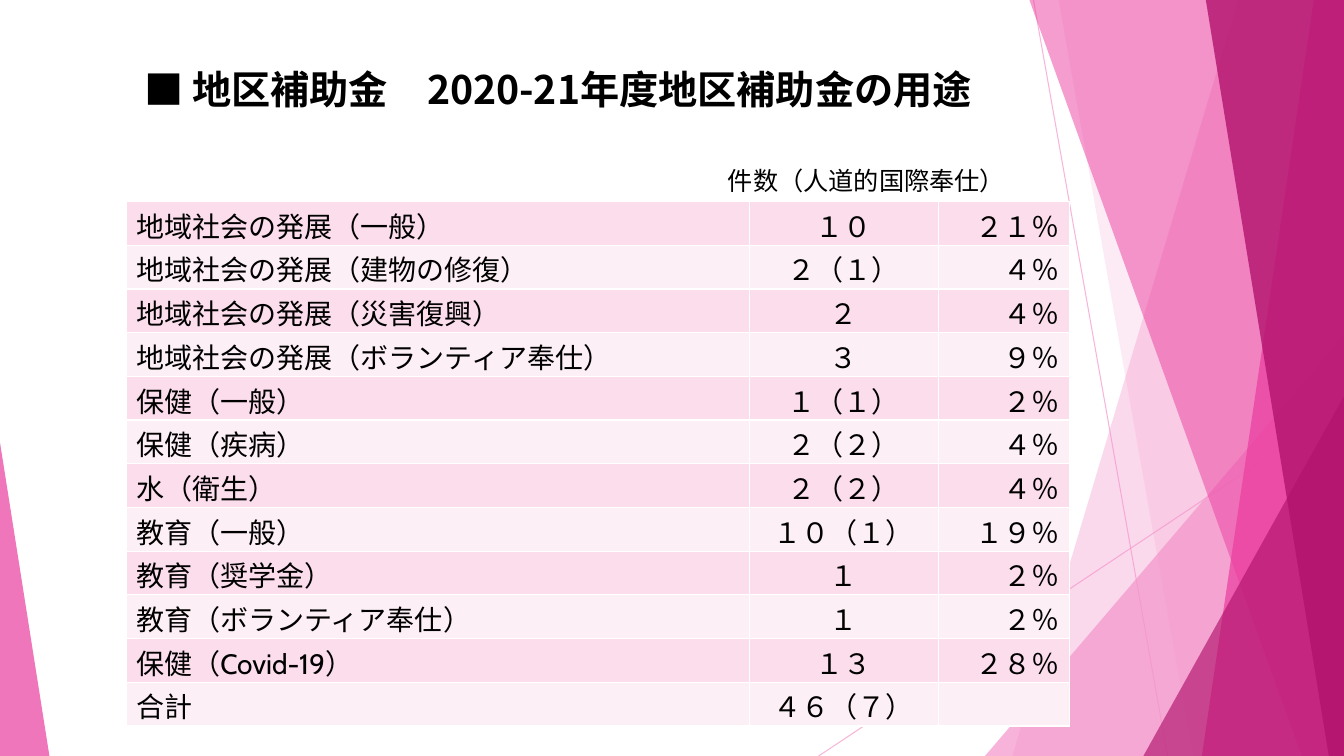
from dataclasses import dataclass

import lxml.etree
import pptx
import pptx.dml.color
import pptx.dml.fill
import pptx.enum.shapes
import pptx.enum.text
import pptx.oxml.ns
import pptx.slide
import pptx.table
import pptx.text.text
import pptx.util

Inches = pptx.util.Inches
Align = pptx.enum.text.PP_ALIGN
Anchor = pptx.enum.text.MSO_ANCHOR
qn = pptx.oxml.ns.qn


@dataclass(frozen=True)
class Theme:
    width: float = 13.33
    height: float = 7.5
    title_font: str = "Noto Sans CJK JP"
    body_font: str = "Cabin"
    title_size: int = 28
    table_size: int = 20
    caption_size: int = 18
    text: str = "000000"
    border: str = "FFFFFF"
    light: str = "F496CB"
    bright: str = "EB3D9F"
    deep: str = "B2136D"
    bands: tuple[str, str] = ("FBDDEC", "FDEFF6")


THEME = Theme()


@dataclass(frozen=True)
class Ray:
    start: tuple[float, float]
    end: tuple[float, float]


@dataclass(frozen=True)
class Panel:
    top_x: float
    bottom_x: float
    color: str
    opacity: int


@dataclass(frozen=True)
class Corner:
    left: float
    top: float
    width: float
    apex: int
    color: str
    opacity: int


@dataclass(frozen=True)
class Grant:
    purpose: str
    count: str
    share: str


RAYS = [
    Ray((10.25, 0), (11.58, THEME.height)),
    Ray((THEME.width, 4.03), (8.12, THEME.height)),
]
FACETS = [
    Panel(12.28, 10.04, THEME.light, 36),
    Panel(10.5, 11.83, THEME.light, 20),
    Corner(9.77, 3.33, 3.56, 1, THEME.light, 72),
    Panel(10.21, 12.91, THEME.bright, 50),
    Panel(13.03, 11.92, THEME.bright, 70),
    Panel(11.96, 13.18, THEME.deep, 80),
    Corner(11.34, 3.93, 1.99, 1, THEME.deep, 66),
    Corner(0, 4.39, 0.49, 0, THEME.bright, 70),
]
GRANTS = [
    Grant("地域社会の発展（一般）", "１０", "２１％"),
    Grant("地域社会の発展（建物の修復）", "２（１）", "４％"),
    Grant("地域社会の発展（災害復興）", "２", "４％"),
    Grant("地域社会の発展（ボランティア奉仕）", "３", "９％"),
    Grant("保健（一般）", "１（１）", "２％"),
    Grant("保健（疾病）", "２（２）", "４％"),
    Grant("水（衛生）", "２（２）", "４％"),
    Grant("教育（一般）", "１０（１）", "１９％"),
    Grant("教育（奨学金）", "１", "２％"),
    Grant("教育（ボランティア奉仕）", "１", "２％"),
    Grant("保健（Covid-19）", "１３", "２８％"),
    Grant("合計", "４６（７）", ""),
]
COLUMN_WIDTHS = (6.18, 1.88, 1.3)
COLUMN_ALIGNMENTS = (Align.LEFT, Align.CENTER, Align.RIGHT)


def rgb(color: str) -> pptx.dml.color.RGBColor:
    return pptx.dml.color.RGBColor.from_string(color)


def paint(fill: pptx.dml.fill.FillFormat, element: lxml.etree.ElementBase,
          color: str, opacity: int) -> None:
    fill.solid()
    fill.fore_color.rgb = rgb(color)
    tint = element.find(".//" + qn("a:srgbClr"))
    lxml.etree.SubElement(tint, qn("a:alpha"), val=str(opacity * 1000))


def write(frame: pptx.text.text.TextFrame, text: str, font: str, size: int,
          align: Align = Align.LEFT, bold: bool = False) -> None:
    frame.text = text
    para = frame.paragraphs[0]
    para.alignment = align
    for span in para.runs:
        span.font.name = font
        span.font.size = pptx.util.Pt(size)
        span.font.bold = bold
        span.font.color.rgb = rgb(THEME.text)
        lxml.etree.SubElement(span._r.get_or_add_rPr(), qn("a:ea"), typeface=THEME.title_font)


def draw_ray(page: pptx.slide.Slide, ray: Ray) -> None:
    line = page.shapes.add_connector(
        pptx.enum.shapes.MSO_CONNECTOR.STRAIGHT,
        *map(Inches, ray.start + ray.end))
    line.line.width = pptx.util.Pt(0.75)
    paint(line.line.fill, line.element.spPr, THEME.light, 70)
    lxml.etree.SubElement(line.element.spPr, qn("a:effectLst"))


def draw_facet(page: pptx.slide.Slide, facet: Panel | Corner) -> None:
    if isinstance(facet, Panel):
        builder = page.shapes.build_freeform(Inches(facet.top_x), 0)
        corners = [(THEME.width, 0), (THEME.width, THEME.height),
                   (facet.bottom_x, THEME.height)]
        builder.add_line_segments([(Inches(x), Inches(y)) for x, y in corners])
        shape = builder.convert_to_shape()
    else:
        shape = page.shapes.add_shape(
            pptx.enum.shapes.MSO_SHAPE.ISOSCELES_TRIANGLE,
            Inches(facet.left), Inches(facet.top), Inches(facet.width),
            Inches(THEME.height - facet.top))
        shape.adjustments[0] = facet.apex
    paint(shape.fill, shape.element.spPr, facet.color, facet.opacity)
    shape.line.fill.background()
    shape.shadow.inherit = False


def draw_title(page: pptx.slide.Slide) -> None:
    title = page.shapes.title
    title.left, title.top = Inches(1.33), Inches(0.6)
    title.width, title.height = Inches(8.99), Inches(0.57)
    title.text_frame.auto_size = pptx.enum.text.MSO_AUTO_SIZE.NONE
    title.text_frame.vertical_anchor = Anchor.MIDDLE
    write(title.text_frame, "■ 地区補助金　2020-21年度地区補助金の用途",
          THEME.title_font, THEME.title_size, bold=True)
    page.shapes.element.append(title.element)


def format_cell(cell: pptx.table._Cell, text: str, align: Align, color: str) -> None:
    cell.margin_top, cell.margin_bottom = Inches(0.03), 0
    cell.vertical_anchor = Anchor.BOTTOM
    properties = cell._tc.get_or_add_tcPr()
    for side in ("a:lnL", "a:lnR", "a:lnT", "a:lnB"):
        edge = lxml.etree.SubElement(properties, qn(side), w=str(pptx.util.Pt(1)))
        solid = lxml.etree.SubElement(edge, qn("a:solidFill"))
        lxml.etree.SubElement(solid, qn("a:srgbClr"), val=THEME.border)
    cell.fill.solid()
    cell.fill.fore_color.rgb = rgb(color)
    write(cell.text_frame, text, THEME.body_font, THEME.table_size, align)


def draw_table(page: pptx.slide.Slide) -> None:
    table = page.shapes.add_table(
        len(GRANTS), len(COLUMN_WIDTHS), Inches(1.25), Inches(2),
        Inches(sum(COLUMN_WIDTHS)), Inches(5.2)).table
    table.first_row = table.horz_banding = False
    for column, width in zip(table.columns, COLUMN_WIDTHS):
        column.width = Inches(width)
    for index, grant in enumerate(GRANTS):
        values = (grant.purpose, grant.count, grant.share)
        for cell, text, align in zip(table.rows[index].cells, values, COLUMN_ALIGNMENTS):
            format_cell(cell, text, align, THEME.bands[index % 2])


def draw_caption(page: pptx.slide.Slide) -> None:
    box = page.shapes.add_textbox(Inches(7.12), Inches(1.59), Inches(2.98), Inches(0.4))
    box.text_frame.word_wrap = True
    write(box.text_frame, "件数（人道的国際奉仕）", THEME.body_font, THEME.caption_size)


def main() -> None:
    deck = pptx.Presentation()
    deck.slide_width, deck.slide_height = Inches(THEME.width), Inches(THEME.height)
    page = deck.slides.add_slide(deck.slide_layouts[5])
    for ray in RAYS:
        draw_ray(page, ray)
    for facet in FACETS:
        draw_facet(page, facet)
    draw_title(page)
    draw_table(page)
    draw_caption(page)
    deck.save("out.pptx")


if __name__ == "__main__":
    main()
